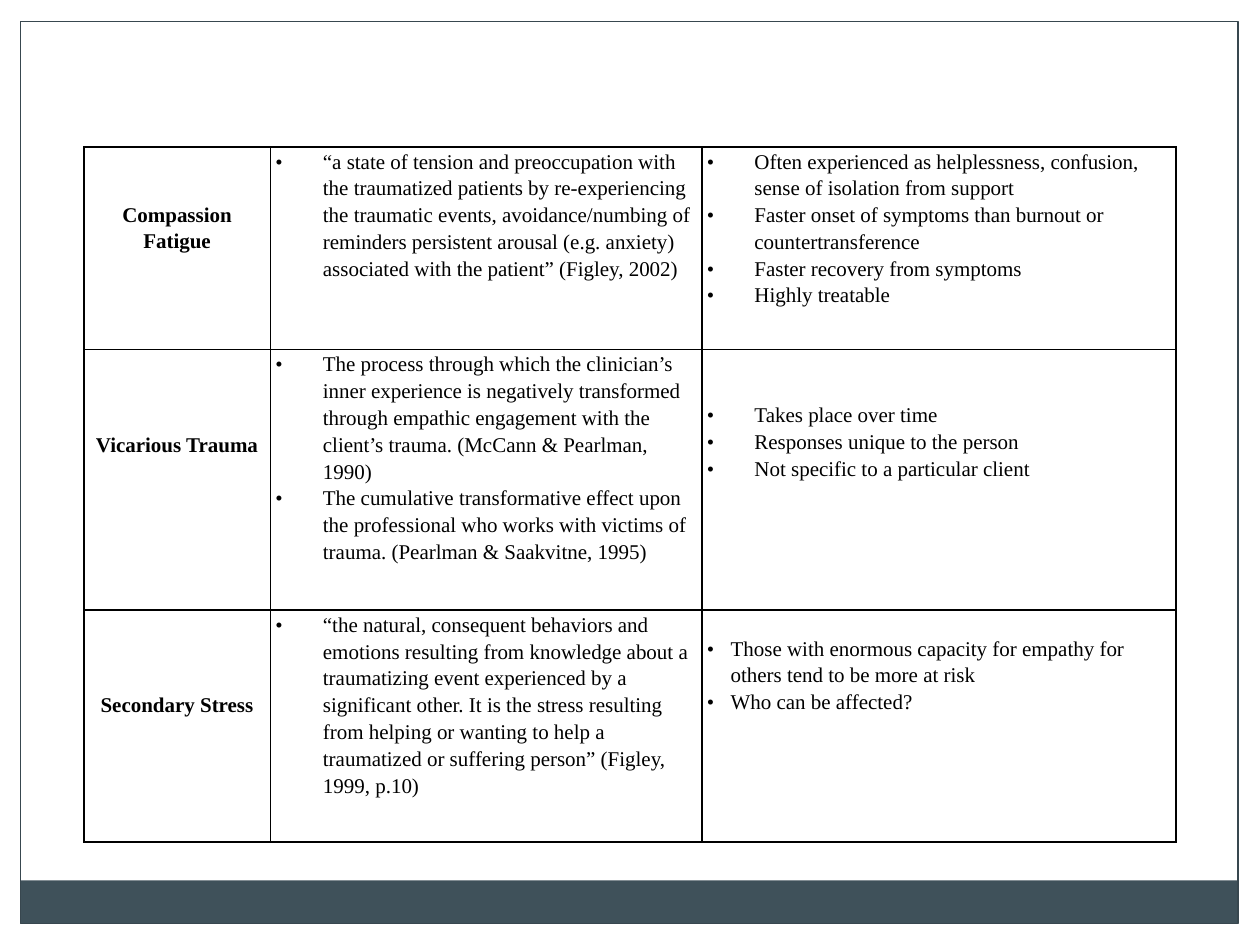
from dataclasses import dataclass

from lxml import etree
from pptx import Presentation
from pptx import util as u
from pptx.dml import color
from pptx.enum import shapes, text
from pptx.oxml import ns

Cm = u.Cm


@dataclass(frozen=True)
class Theme:
    """Colours, font and sizes."""
    ink: str = "000000"
    page: str = "FFFFFF"
    band: str = "3F515A"
    edge: str = "38474F"
    font: str = "Times New Roman"
    size: int = 12
    rule: float = 1
    frame: float = 0.75
    lead: float = 1.15


LOOK = Theme()
WIDE, SLIM = 0.96, 0.48
COLS = (3.76, 8.7, 9.56)
ROWS = (
    dict(high=4.09, term="Compassion Fatigue", drop=1.07, down=0, hang=WIDE,
         means=("“a state of tension and preoccupation with the traumatized patients by "
                "re-experiencing the traumatic events, avoidance/numbing of reminders persistent "
                "arousal (e.g. anxiety) associated with the patient” (Figley, 2002)",),
         signs=("Often experienced as helplessness, confusion, sense of isolation from support",
                "Faster onset of symptoms than burnout or countertransference",
                "Faster recovery from symptoms", "Highly treatable")),
    dict(high=5.25, term="Vicarious Trauma", drop=1.62, down=1.02, hang=WIDE,
         means=("The process through which the clinician’s inner experience is negatively "
                "transformed through empathic engagement with the client’s trauma. "
                "(McCann & Pearlman, 1990)",
                "The cumulative transformative effect upon the professional who works with "
                "victims of trauma. (Pearlman & Saakvitne, 1995)"),
         signs=("Takes place over time", "Responses unique to the person",
                "Not specific to a particular client")),
    dict(high=4.67, term="Secondary Stress", drop=1.62, down=0.48, hang=SLIM,
         means=("“the natural, consequent behaviors and emotions resulting from knowledge about "
                "a traumatizing event experienced by a significant other. It is the stress "
                "resulting from helping or wanting to help a traumatized or suffering person” "
                "(Figley, 1999, p.10)",),
         signs=("Those with enormous capacity for empathy for others tend to be more at risk",
                "Who can be affected?")),
)


def apply(obj, **vals):
    """Set each named value on an object."""
    for key, val in vals.items():
        setattr(obj, key, val)


def rgb(code):
    """Turn a hex code into a colour."""
    return color.RGBColor.from_string(code)


def sub(node, tag, **vals):
    """Add a child element with attributes."""
    return etree.SubElement(node, ns.qn(tag), vals)


def block(slide, box, fill=None):
    """Place a rectangle in centimetres, either filled or outlined."""
    shape = slide.shapes.add_shape(shapes.MSO_SHAPE.RECTANGLE, *map(Cm, box))
    shape.shadow.inherit = False
    if fill:
        shape.fill.solid()
        shape.fill.fore_color.rgb = rgb(fill)
        shape.line.fill.background()
    else:
        shape.fill.background()
        shape.line.color.rgb = rgb(LOOK.edge)
        shape.line.width = u.Pt(LOOK.frame)


def border(slide, box):
    """Draw the page margins, the foot band and the frame inside a page box."""
    left, top, width, height = box
    edge, deep = 0.43, 0.87
    wide, high = width - 2 * edge, height - 2 * edge
    block(slide, (left, top, width, edge), LOOK.page)
    for side in (left + width - edge, left):
        block(slide, (side, top, edge, height), LOOK.page)
    block(slide, (left + 0.41, top + edge + high - deep, wide, deep), LOOK.band)
    block(slide, (left + 0.42, top + edge, wide, high))


def rule(cell):
    """Rule all four sides of a cell and clear its fill."""
    props = cell._tc.get_or_add_tcPr()
    for side in "LRTB":
        line = sub(props, f"a:ln{side}", w=str(u.Pt(LOOK.rule)))
        sub(sub(line, "a:solidFill"), "a:srgbClr", val=LOOK.ink)
    cell.fill.background()


def write(cell, items, drop=0, hang=0):
    """Fill a cell with a centred term, or with bullets when hang is set."""
    apply(cell, margin_left=Cm(0.1), margin_right=Cm(0.1),
          margin_top=Cm(drop), margin_bottom=0)
    frame = cell.text_frame
    for i, item in enumerate(items):
        para = frame.add_paragraph() if i else frame.paragraphs[0]
        para.line_spacing = LOOK.lead
        run = para.add_run()
        run.text = item
        apply(run.font, name=LOOK.font, size=u.Pt(LOOK.size), bold=not hang)
        run.font.color.rgb = rgb(LOOK.ink)
        if hang:
            props = para._p.get_or_add_pPr()
            props.set("marL", str(Cm(hang)))
            props.set("indent", str(-Cm(hang)))
            sub(props, "a:buFont", typeface=LOOK.font)
            sub(props, "a:buChar", char="•")
        else:
            para.alignment = text.PP_ALIGN.CENTER


def chart(slide, box):
    """Place the table of terms, meanings and signs."""
    grid = slide.shapes.add_table(len(ROWS), len(COLS), *map(Cm, box)).table
    apply(grid, first_row=False, horz_banding=False)
    for col, width in zip(grid.columns, COLS):
        col.width = Cm(width)
    for row, data in zip(grid.rows, ROWS):
        row.height = Cm(data["high"])
        term, means, signs = row.cells
        write(term, [data["term"]], data["drop"])
        write(means, data["means"], hang=WIDE)
        write(signs, data["signs"], data["down"], data["hang"])
        for cell in row.cells:
            rule(cell)


def main():
    """Build and save the slide."""
    page = (25.4, 19.05)
    deck = Presentation()
    apply(deck, slide_width=Cm(page[0]), slide_height=Cm(page[1]))
    slide = deck.slides.add_slide(deck.slide_layouts[6])
    border(slide, (0, 0, *page))
    chart(slide, (1.69, 2.96, sum(COLS), sum(row["high"] for row in ROWS)))
    deck.save("out.pptx")


if __name__ == "__main__":
    main()
